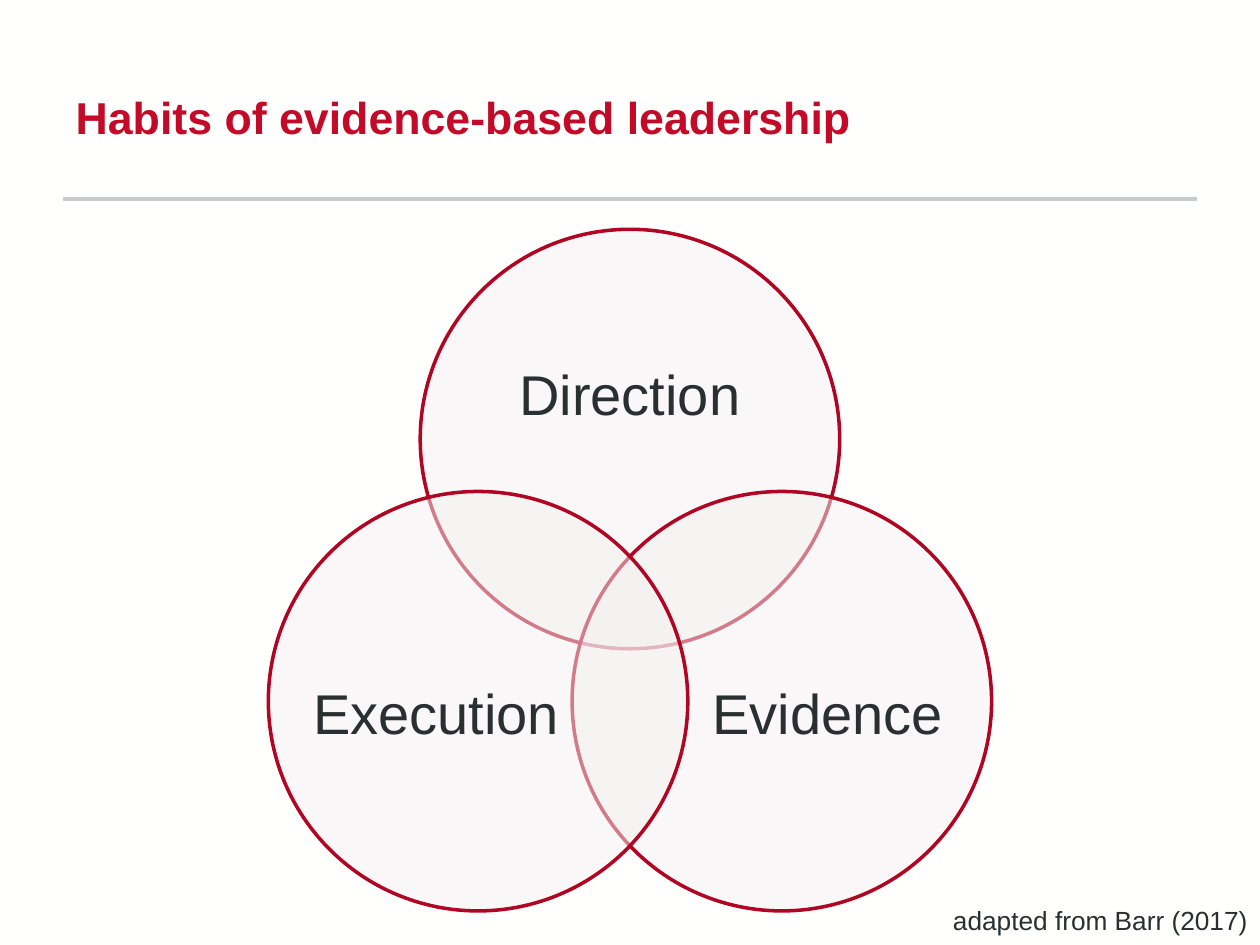
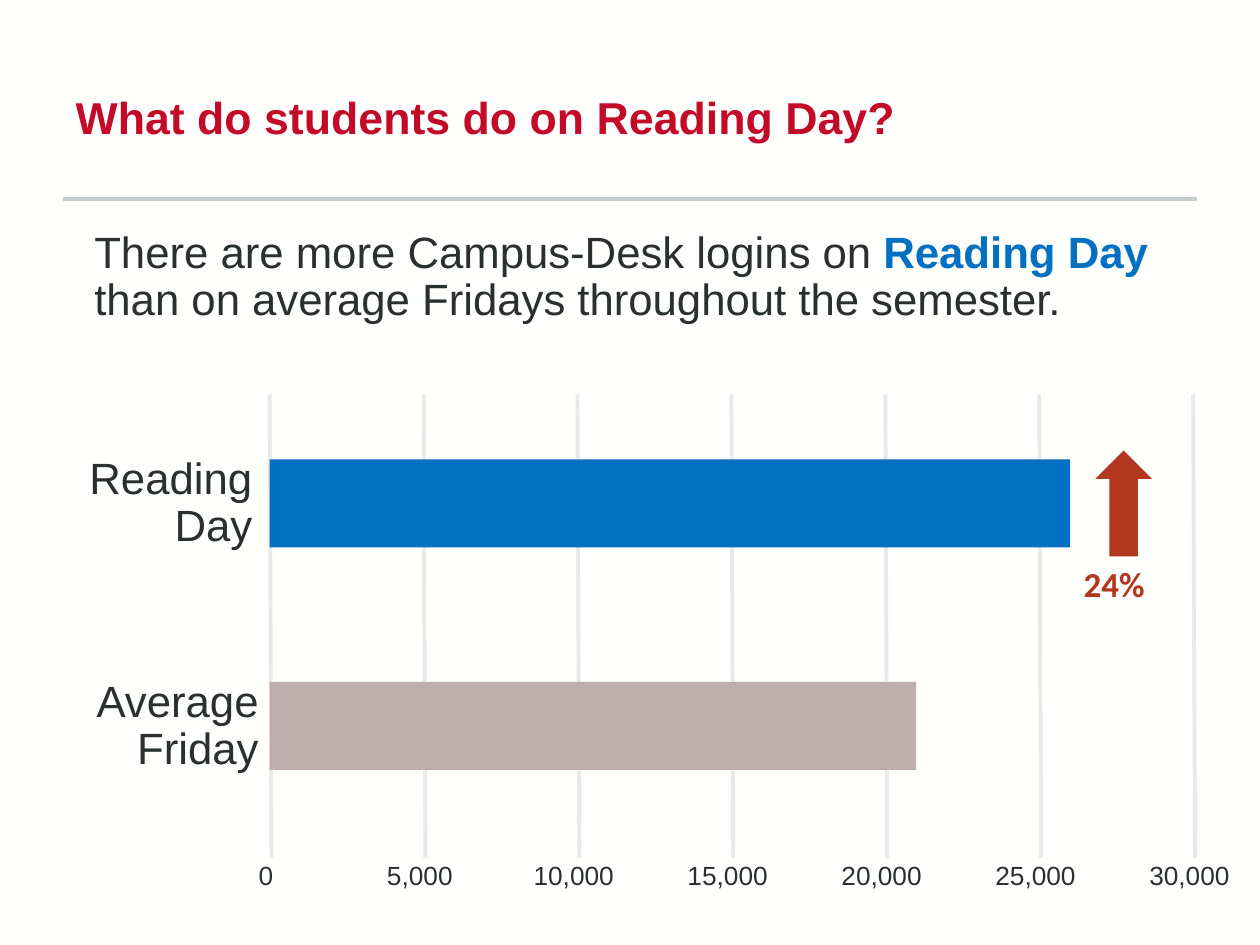
import lxml.etree
import pptx
import pptx.dml.color
import pptx.enum.shapes
import pptx.enum.text
import pptx.oxml.ns
import pptx.util

RGB = pptx.dml.color.RGBColor
FORM = pptx.enum.shapes.MSO_SHAPE
ALIGN = pptx.enum.text.PP_ALIGN
ANCHOR = pptx.enum.text.MSO_ANCHOR
FIT = pptx.enum.text.MSO_AUTO_SIZE
qn = pptx.oxml.ns.qn

PAPER = RGB(0xFF, 0xFF, 0xFE)
INK = RGB(0x2A, 0x2F, 0x30)
RED = RGB(0xC3, 0x0A, 0x29)
RING = RGB(0xB0, 0x06, 0x23)
DISC = RGB(0xF4, 0xF1, 0xF1)
RULE = RGB(0xC7, 0xCC, 0xCC)
GRID = RGB(0xE9, 0xE9, 0xE9)
BLUE = RGB(0x00, 0x70, 0xC0)
TAUPE = RGB(0xBE, 0xAD, 0xAD)
RUST = RGB(0xB3, 0x37, 0x1F)

WIDE, HIGH = pptx.util.Inches(10), pptx.util.Inches(7.5)
COLS = 100  # square grid: 100 columns by 75 rows

STEP, TOP = 5000, 30000
# value, colour, label lines, right edge of the label
BARS = [
    (26000, BLUE, ["Reading", "Day"], 21.0),
    (21000, TAUPE, ["Average", "Friday"], 21.5),
]
# label and its box as shares of the circle
DIRECT = ("Direction", (0.13, 0.17, 0.74, 0.46))
PROOF = ("Evidence", (0.31, 0.26, 0.6, 0.55))
ACTION = ("Execution", (0.1, 0.26, 0.6, 0.55))


def grid(*cells):
    """Turn grid cells into slide lengths."""
    return [round(cell * WIDE / COLS) for cell in cells]


def style(para, size, color=INK, bold=False, face="Arial"):
    font = para.font
    font.name, font.size, font.bold = face, pptx.util.Pt(size), bold
    font.color.rgb = color


def write(slide, box, lines, size, align=ALIGN.LEFT, space=0.9, **look):
    """Add a text box with one paragraph for each line."""
    frame = slide.shapes.add_textbox(*grid(*box)).text_frame
    frame.word_wrap = True
    frame.auto_size = FIT.SHAPE_TO_FIT_TEXT
    frame.text = "\n".join(lines)
    for para in frame.paragraphs:
        para.alignment, para.line_spacing = align, space
        style(para, size, **look)
    return frame


def shape(slide, form, box, color):
    item = slide.shapes.add_shape(form, *grid(*box))
    item.shadow.inherit = False
    item.fill.solid()
    item.fill.fore_color.rgb = color
    item.line.fill.background()
    return item


def line(slide, ends, color, width):
    item = slide.shapes.add_connector(
        pptx.enum.shapes.MSO_CONNECTOR.STRAIGHT, *grid(*ends))
    item.line.color.rgb = color
    item.line.width = pptx.util.Pt(width)
    lxml.etree.SubElement(item.element.spPr, qn("a:effectLst"))
    return item


def setup(deck):
    """Give the title layout its background and title box."""
    layout = deck.slide_layouts[5]
    fill = layout.background.fill
    fill.solid()
    fill.fore_color.rgb = PAPER
    title = layout.placeholders[0]
    title.left, title.top, title.width, title.height = grid(5, 3, 90, 12.5)
    return layout


def start(deck, layout, text):
    slide = deck.slides.add_slide(layout)
    frame = slide.shapes.title.text_frame
    frame.text = text
    frame.auto_size = FIT.NONE
    frame.vertical_anchor = ANCHOR.MIDDLE
    para = frame.paragraphs[0]
    para.alignment = ALIGN.LEFT
    style(para, 25.5, RED, True)
    return slide


def circle(slide, left, top, size, label, share):
    disc = shape(slide, FORM.OVAL, (left, top, size, size), DISC)
    tint = disc.element.spPr.find(qn("a:solidFill"))[0]
    lxml.etree.SubElement(tint, qn("a:alpha")).set("val", "50000")
    disc.line.color.rgb = RING
    disc.line.width = pptx.util.Pt(2)
    x, y, w, h = [part * size for part in share]
    frame = write(slide, (left + x, top + y, w, h), [label], 32, ALIGN.CENTER)
    frame.auto_size = FIT.NONE
    frame.vertical_anchor = ANCHOR.MIDDLE
    frame.margin_left = frame.margin_right = 0
    frame.margin_top = frame.margin_bottom = 0


def venn(slide, box):
    """Place one circle on top and two below, filling the box."""
    left, top, width, height = box
    size = 0.58 * width
    low = top + height - size
    circle(slide, left + (width - size) / 2, top, size, *DIRECT)
    circle(slide, left + width - size, low, size, *PROOF)
    circle(slide, left, low, size, *ACTION)


def axis(slide, box):
    left, top, width, height = box
    for value in range(0, TOP + 1, STEP):
        x = left + width * value / TOP
        line(slide, (x, top, x + 0.15, top + height), GRID, 2.25)
        write(slide, (x - 4.9, top + height - 0.1, 9.2, 3.3), [f"{value:,}"],
              15, ALIGN.CENTER)


def bars(slide, box):
    left, top, width, height = box
    thick, pitch = 0.19 * height, 0.48 * height
    first = top + 0.14 * height
    for row, (value, color, label, edge) in enumerate(BARS):
        y = first + row * pitch
        shape(slide, FORM.RECTANGLE,
              (left, y, width * value / TOP, thick), color)
        write(slide, (0, y - 0.7, edge, 8.6), label, 25, ALIGN.RIGHT)
    tip = left + width * BARS[0][0] / TOP
    shape(slide, FORM.UP_ARROW, (tip + 2, first - 0.7, 4.5, 8.4), RUST)
    write(slide, (tip + 0.1, first + 8.1, 10, 4), ["24%"], 20,
          color=RUST, bold=True, face="Calibri")


def claim(slide, box):
    frame = write(slide, box, ["There are more Campus-Desk logins on "], 25)
    para = frame.paragraphs[0]
    key = para.add_run()
    key.text = "Reading Day "
    key.font.bold = True
    key.font.color.rgb = BLUE
    para.add_run().text = "than on average Fridays throughout the semester."


def habits(deck, layout):
    slide = start(deck, layout, "Habits of evidence-based leadership")
    # The layout takes no new shapes, so its rule is drawn here and moved.
    rule = line(slide, (5, 15.8, 95, 15.8), RULE, 2)
    layout.shapes.element.append(rule.element)
    venn(slide, (21.3, 18.2, 57.4, 54.1))
    write(slide, (57.2, 71.3, 42.8, 3.5), ["adapted from Barr (2017)"], 15,
          ALIGN.RIGHT, 1.0)


def logins(deck, layout):
    slide = start(deck, layout, "What do students do on Reading Day?")
    plot = (21.4, 31.3, 73.3, 36.8)
    axis(slide, plot)
    bars(slide, plot)
    claim(slide, (6.5, 17.8, 90.2, 8.6))


def main():
    deck = pptx.Presentation()
    deck.slide_width, deck.slide_height = WIDE, HIGH
    layout = setup(deck)
    habits(deck, layout)
    logins(deck, layout)
    deck.save("out.pptx")


if __name__ == "__main__":
    main()
